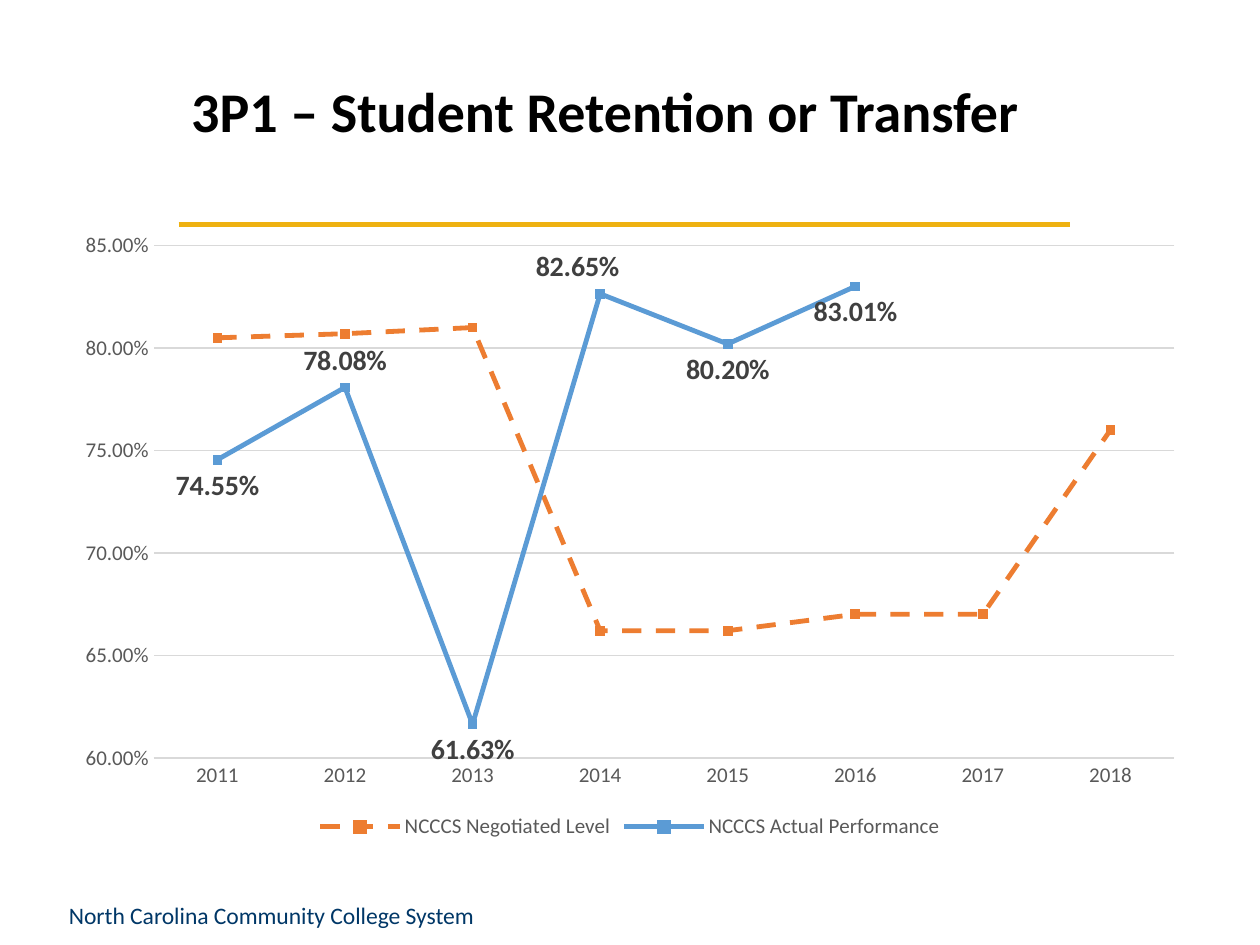
from pptx import Presentation, util as u
from pptx.chart.data import CategoryChartData
from pptx.dml.color import RGBColor
from pptx.enum import chart as ch, dml, shapes, text
from pptx.oxml import parse_xml
from pptx.oxml.ns import nsdecls, qn

YEARS = [str(year) for year in range(2011, 2019)]
NEGOTIATED = [0.805, 0.807, 0.81, 0.662, 0.662, 0.67, 0.67, 0.76]
ACTUAL = [0.7455, 0.7808, 0.6163, 0.8265, 0.802, 0.8301, None, None]
LABELS_ABOVE = {1: 0, 3: -0.02}  # point index: sideways shift, share of chart width
PERCENT = "0.00%"


def rgb(value):
    return RGBColor.from_string(value)


class SlideBuilder:
    font = "Calibri"
    black, navy, gold = "000000", "003767", "EEB111"
    orange, blue = "ED7D31", "5B9BD5"
    axis_text, label_text, grid = "595959", "404040", "D9D9D9"

    def __init__(self, prs):
        self.s = prs.slides.add_slide(prs.slide_layouts[5])

    def style(self, font, size, color, bold=False):
        font.name, font.size, font.bold = self.font, u.Pt(size), bold
        font.color.rgb = rgb(color)

    def stroke(self, line, color, width):
        line.color.rgb = rgb(color)
        line.width = u.Pt(width)

    def add_text(self, sp, content, size, color, bold=False):
        tf = sp.text_frame
        tf.word_wrap = True
        p = tf.paragraphs[0]
        p.alignment = text.PP_ALIGN.LEFT
        r = p.add_run()
        r.text = content
        self.style(r.font, size, color, bold)
        return p

    def title(self, content, left, top, width, height):
        sp = self.s.shapes.title
        sp.left, sp.top, sp.width, sp.height = map(u.Cm, (left, top, width, height))
        sp.text_frame.vertical_anchor = text.MSO_ANCHOR.MIDDLE
        sp.text_frame.auto_size = text.MSO_AUTO_SIZE.NONE
        self.add_text(sp, content, 32, self.black, True).line_spacing = 0.9

    def text_box(self, content, left, top, width, height):
        sp = self.s.shapes.add_textbox(*map(u.Cm, (left, top, width, height)))
        self.add_text(sp, content, 13.5, self.navy)

    def rule(self, left, right, y):
        ln = self.s.shapes.add_connector(
            shapes.MSO_CONNECTOR.STRAIGHT, *map(u.Cm, (left, y, right, y)))
        self.stroke(ln.line, self.gold, 3)
        ln._element.spPr.append(parse_xml(f"<a:effectLst {nsdecls('a')}/>"))

    def line_chart(self, left, top, width, height):
        data = CategoryChartData(number_format=PERCENT)
        data.categories = YEARS
        data.add_series("NCCCS Negotiated Level", NEGOTIATED)
        data.add_series("NCCCS Actual Performance", ACTUAL)
        chart = self.s.shapes.add_chart(
            ch.XL_CHART_TYPE.LINE_MARKERS,
            *map(u.Cm, (left, top, width, height)), data).chart
        self.style(chart.font, 10, self.black)
        chart.has_title = False
        chart.has_legend = True
        chart.legend.position = ch.XL_LEGEND_POSITION.BOTTOM
        chart.legend.include_in_layout = False
        self.style(chart.legend.font, 12, self.axis_text)
        self.axes(chart.category_axis, chart.value_axis)

        plot = chart.plots[0]
        plot.vary_by_categories = False
        negotiated, actual = plot.series
        self.series(negotiated, self.orange)
        negotiated.format.line.dash_style = dml.MSO_LINE.DASH
        self.series(actual, self.blue)
        self.labels(actual)

    def axes(self, years, values):
        for axis in (years, values):
            axis.major_tick_mark = axis.minor_tick_mark = ch.XL_TICK_MARK.NONE
            self.style(axis.tick_labels.font, 12, self.axis_text)
        self.stroke(years.format.line, self.grid, 1)
        values.format.line.fill.background()
        values.minimum_scale, values.maximum_scale = 0.6, 0.85
        values.major_unit = 0.05
        values.tick_labels.number_format = PERCENT
        values.tick_labels.number_format_is_linked = False
        self.stroke(values.major_gridlines.format.line, self.grid, 0.75)

    def series(self, series, color):
        series.smooth = False
        self.stroke(series.format.line, color, 2.75)
        marker = series.marker
        marker.style, marker.size = ch.XL_MARKER_STYLE.SQUARE, 5
        marker.format.fill.solid()
        marker.format.fill.fore_color.rgb = rgb(color)
        marker.format.line.color.rgb = rgb(color)

    def labels(self, series):
        labels = series.data_labels
        labels.show_value = True
        labels.number_format = PERCENT
        labels.number_format_is_linked = False
        labels.position = ch.XL_LABEL_POSITION.BELOW
        self.style(labels.font, 16, self.label_text, True)
        for index, shift in LABELS_ABOVE.items():
            label = series.points[index].data_label
            self.style(label.font, 16, self.label_text, True)
            label.position = ch.XL_LABEL_POSITION.ABOVE
            if shift:
                self.shift_label(labels._element, index, shift)

    def shift_label(self, labels, index, shift):
        for label in labels.findall(qn("c:dLbl")):
            idx = label.find(qn("c:idx"))
            if idx.get("val") == str(index):
                idx.addnext(parse_xml(
                    f"<c:layout {nsdecls('c')}><c:manualLayout>"
                    f'<c:x val="{shift}"/><c:y val="0"/>'
                    "</c:manualLayout></c:layout>"))


def main():
    prs = Presentation()
    prs.slide_width, prs.slide_height = u.Cm(25.4), u.Cm(19.05)
    slide = SlideBuilder(prs)
    slide.rule(3.6, 21.57, 4.52)
    slide.text_box("North Carolina Community College System", 1.14, 18.03, 9.02, 1.02)
    slide.title("3P1 – Student Retention or Transfer", 3.6, 0.46, 20.45, 3.68)
    slide.line_chart(1.27, 4.45, 22.86, 12.57)
    prs.save("out.pptx")


if __name__ == "__main__":
    main()
